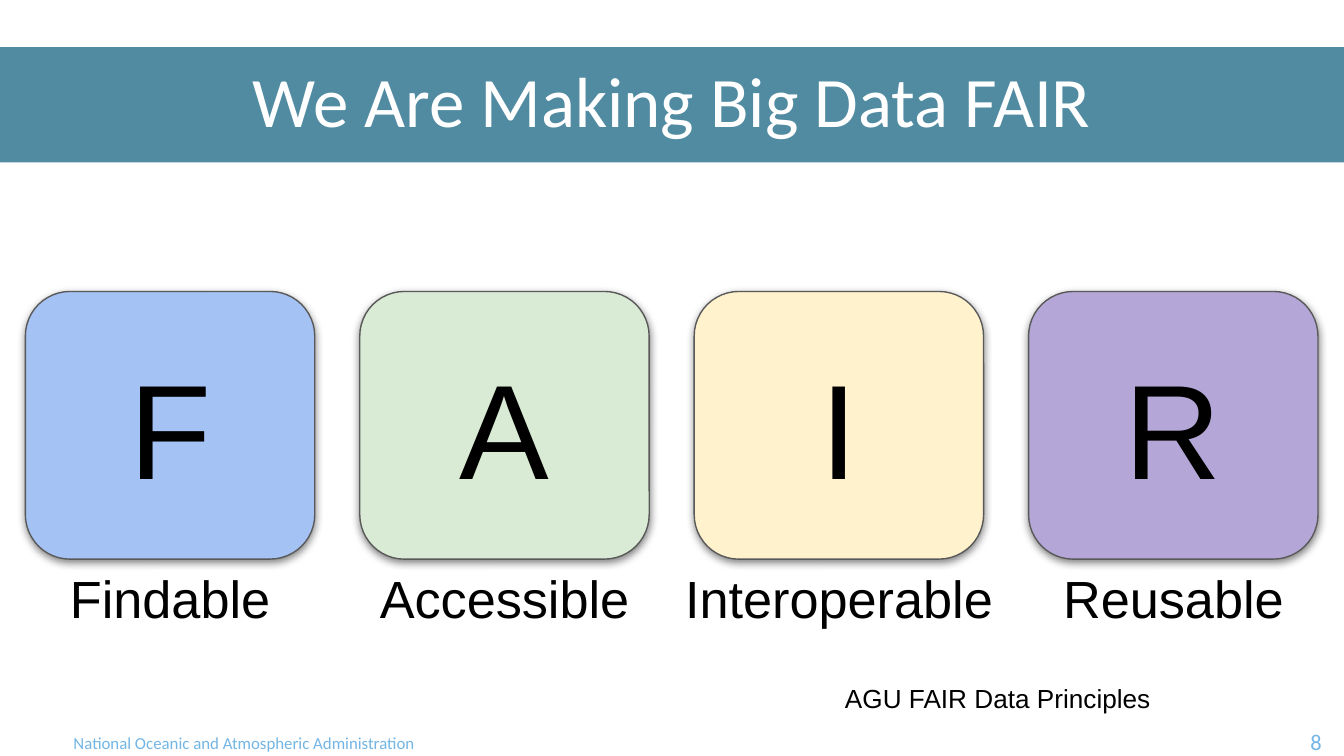
from dataclasses import dataclass

from lxml import etree
from pptx import Presentation, util as u
from pptx.dml.color import RGBColor
from pptx.enum import shapes, text
from pptx.oxml.ns import qn

COLOURS = {
    "banner": "266F8B",
    "footer": "73B5E4",
    "white": "FFFFFF",
    "black": "000000",
    "outline": "595959",
    "blue": "A4C2F4",
    "green": "D9EBD4",
    "yellow": "FFF2CC",
    "purple": "B4A7D7",
}
CARD_LEFT, CARD_TOP, CARD_WIDTH, CARD_HEIGHT = 0.48, 5.51, 5.47, 5.06
CARD_PITCH = 6.32
LABEL_HEIGHT = 1.45


@dataclass(frozen=True)
class Box:
    left: float
    top: float
    width: float
    height: float


@dataclass(frozen=True)
class Style:
    size: float
    font: str = "Arial"
    colour: str = "black"
    align: text.PP_ALIGN = text.PP_ALIGN.LEFT
    anchor: text.MSO_ANCHOR = text.MSO_ANCHOR.TOP
    inset: float = 0.25
    spacing: float = 1.0


@dataclass(frozen=True)
class Principle:
    name: str
    colour: str
    label_width: float = CARD_WIDTH


CENTRED = {"align": text.PP_ALIGN.CENTER, "anchor": text.MSO_ANCHOR.MIDDLE}
TITLE = Style(38, "Calibri", "white", spacing=0.9, **CENTRED)
LETTER = Style(72, **CENTRED)
LABEL = Style(28, inset=0.13, **CENTRED)
SOURCE = Style(14)
FOOTER = Style(9, "Calibri", "footer", inset=0.13)
PAGE_NUMBER = Style(12, "Calibri", "footer", text.PP_ALIGN.RIGHT, inset=0.13)

PRINCIPLES = [
    Principle("Findable", "blue"),
    Principle("Accessible", "green"),
    Principle("Interoperable", "yellow", 6.38),
    Principle("Reusable", "purple"),
]


def rgb(name: str) -> RGBColor:
    """Return the named colour."""
    return RGBColor.from_string(COLOURS[name])


def place(box: Box) -> list[u.Length]:
    """Return left, top, width and height as lengths."""
    return [u.Cm(value) for value in (box.left, box.top, box.width, box.height)]


def write(shape, words: str, style: Style) -> None:
    """Put one styled paragraph into a shape."""
    frame = shape.text_frame
    frame.word_wrap = True
    frame.vertical_anchor = style.anchor
    frame.margin_left = frame.margin_right = u.Cm(0.25)
    frame.margin_top = frame.margin_bottom = u.Cm(style.inset)
    paragraph = frame.paragraphs[0]
    paragraph.text = words
    paragraph.alignment = style.align
    paragraph.line_spacing = style.spacing
    paragraph.font.size = u.Pt(style.size)
    paragraph.font.name = style.font
    paragraph.font.color.rgb = rgb(style.colour)


def add_text(slide, box: Box, words: str, style: Style) -> None:
    """Add a text box."""
    write(slide.shapes.add_textbox(*place(box)), words, style)


def add_filled(slide, kind: shapes.MSO_SHAPE, box: Box, colour: str):
    """Add a filled preset shape without shadow."""
    shape = slide.shapes.add_shape(kind, *place(box))
    shape.shadow.inherit = False
    shape.fill.solid()
    shape.fill.fore_color.rgb = rgb(colour)
    return shape


def set_alpha(colour_element, percent: int) -> None:
    """Set the opacity of a colour element."""
    etree.SubElement(colour_element, qn("a:alpha"), val=str(percent * 1000))


def add_banner(slide) -> None:
    """Add the translucent band behind the title."""
    banner = add_filled(slide, shapes.MSO_SHAPE.RECTANGLE, Box(0, 0.89, 25.4, 2.18), "banner")
    banner.line.fill.background()
    set_alpha(banner._element.spPr.find(f"{qn('a:solidFill')}/{qn('a:srgbClr')}"), 80)


def add_soft_shadow(shape) -> None:
    """Give a shape a soft shadow that falls downwards."""
    effects = shape._element.spPr.find(qn("a:effectLst"))
    shadow = etree.SubElement(
        effects, qn("a:outerShdw"), blurRad=str(u.Pt(4.5)), dist=str(u.Pt(1.5)),
        dir="5400000", algn="bl", rotWithShape="0",
    )
    set_alpha(etree.SubElement(shadow, qn("a:srgbClr"), val=COLOURS["black"]), 50)


def add_principle(slide, index: int, principle: Principle) -> None:
    """Add a lettered card with its label below."""
    left = CARD_LEFT + index * CARD_PITCH
    card = add_filled(
        slide, shapes.MSO_SHAPE.ROUNDED_RECTANGLE,
        Box(left, CARD_TOP, CARD_WIDTH, CARD_HEIGHT), principle.colour,
    )
    card.line.color.rgb = rgb("outline")
    card.line.width = u.Pt(0.75)
    add_soft_shadow(card)
    write(card, principle.name[0], LETTER)
    label_left = left + (CARD_WIDTH - principle.label_width) / 2
    label_box = Box(label_left, CARD_TOP + CARD_HEIGHT, principle.label_width, LABEL_HEIGHT)
    add_text(slide, label_box, principle.name, LABEL)


def main() -> None:
    """Build and save the slide."""
    presentation = Presentation()
    presentation.slide_width, presentation.slide_height = u.Cm(25.4), u.Cm(14.29)
    slide = presentation.slides.add_slide(presentation.slide_layouts[6])
    add_banner(slide)
    add_text(slide, Box(1.14, 13.72, 22.5, 0.48),
             "National Oceanic and Atmospheric Administration", FOOTER)
    add_text(slide, Box(22.23, 13.64, 3, 0.51), "8", PAGE_NUMBER)
    add_text(slide, Box(0, 0.79, 25.4, 2.39), "We Are Making Big Data FAIR", TITLE)
    for index, principle in enumerate(PRINCIPLES):
        add_principle(slide, index, principle)
    add_text(slide, Box(15.72, 12.65, 8.46, 1.27), "AGU FAIR Data Principles", SOURCE)
    presentation.save("out.pptx")


if __name__ == "__main__":
    main()
